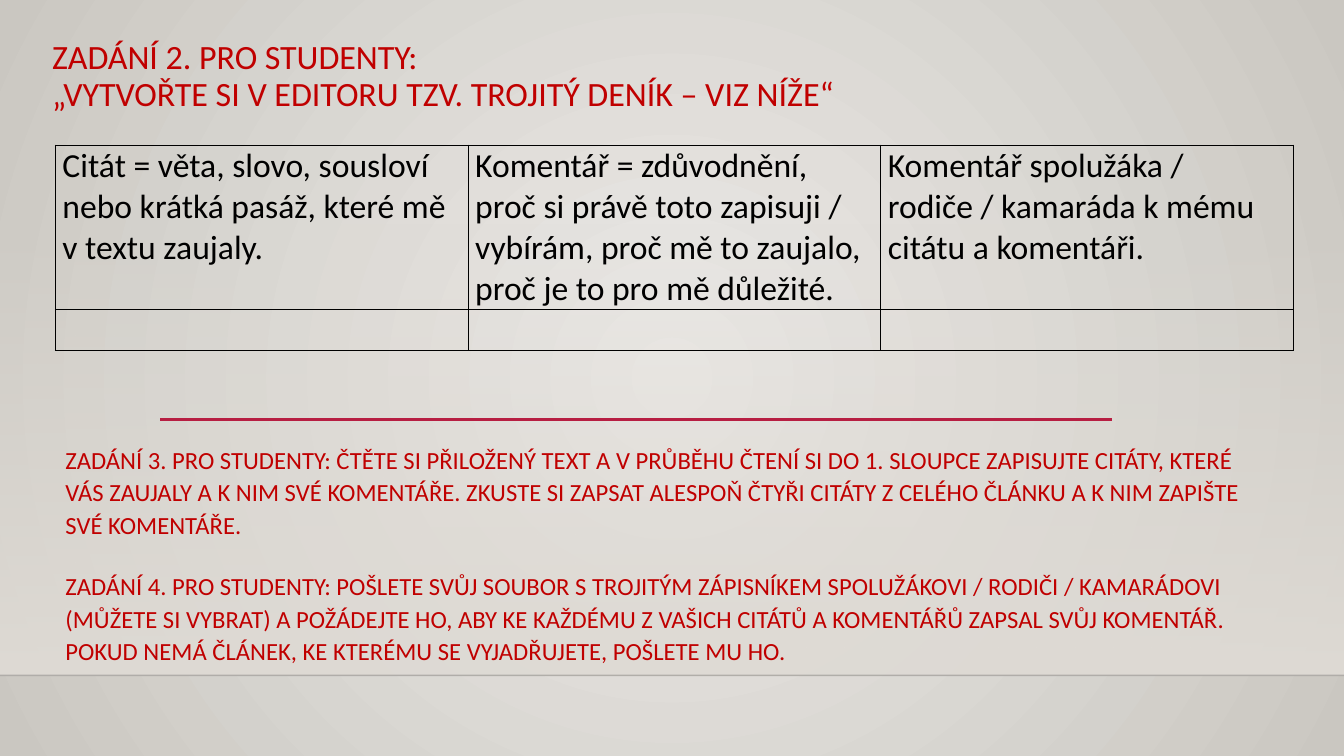
from dataclasses import dataclass

from pptx import Presentation
from pptx.dml.color import RGBColor
from pptx.enum.shapes import MSO_CONNECTOR, MSO_SHAPE
from pptx.enum.text import MSO_ANCHOR
from pptx.oxml import parse_xml
from pptx.oxml.ns import nsdecls, qn
from pptx.util import Inches, Pt

STRAIGHT = MSO_CONNECTOR.STRAIGHT
RECTANGLE = MSO_SHAPE.RECTANGLE
TOP = MSO_ANCHOR.TOP
BOTTOM = MSO_ANCHOR.BOTTOM


@dataclass(frozen=True)
class Theme:
    font: str = "Calibri"
    center: str = "ECEAE7"
    edge: str = "CAC7C1"
    panel: str = "DFDBD5"
    floor: str = "000001"
    rule: str = "B71E42"
    accent: str = "C00000"
    ink: str = "000000"
    title_size: float = 24.3
    body_size: float = 17.6
    cell_size: float = 24


THEME = Theme()
WIDTH, HEIGHT = 13.33, 7.5

TITLE = "ZADÁNÍ 2. PRO STUDENTY:\v„VYTVOŘTE SI V EDITORU TZV. TROJITÝ DENÍK – VIZ NÍŽE“"
TASKS = [
    "ZADÁNÍ 3. PRO STUDENTY: ČTĚTE SI PŘILOŽENÝ TEXT A V PRŮBĚHU ČTENÍ SI DO 1. SLOUPCE "
    "ZAPISUJTE CITÁTY, KTERÉ VÁS ZAUJALY A K NIM SVÉ KOMENTÁŘE. ZKUSTE SI ZAPSAT ALESPOŇ "
    "ČTYŘI CITÁTY Z CELÉHO ČLÁNKU A K NIM ZAPIŠTE SVÉ KOMENTÁŘE.",
    "ZADÁNÍ 4. PRO STUDENTY: POŠLETE SVŮJ SOUBOR S TROJITÝM ZÁPISNÍKEM SPOLUŽÁKOVI / RODIČI / "
    "KAMARÁDOVI (MŮŽETE SI VYBRAT) A POŽÁDEJTE HO, ABY KE KAŽDÉMU Z VAŠICH CITÁTŮ A KOMENTÁŘŮ "
    "ZAPSAL SVŮJ KOMENTÁŘ. POKUD NEMÁ ČLÁNEK, KE KTERÉMU SE VYJADŘUJETE, POŠLETE MU HO.",
]
COLUMNS = [
    "Citát = věta, slovo, sousloví nebo krátká pasáž, které mě v textu zaujaly.",
    "Komentář = zdůvodnění, proč si právě toto zapisuji / vybírám, proč mě to zaujalo, "
    "proč je to pro mě důležité.",
    "Komentář spolužáka / rodiče / kamaráda k mému citátu a komentáři.",
]


def apply(target, values):
    for name, value in values.items():
        setattr(target, name, value)


def style_spans(para, size, color):
    for span in para.runs:
        apply(span.font, {"name": THEME.font, "size": Pt(size)})
        span.font.color.rgb = RGBColor.from_string(color)


def set_gradient(fill, parent, stops, direction):
    fill.gradient()
    marks = "".join(
        f'<a:gs pos="{place * 1000}"><a:srgbClr val="{color}">'
        f'<a:alpha val="{alpha * 1000}"/></a:srgbClr></a:gs>'
        for place, color, alpha in stops
    )
    gradient = parent.find(".//" + qn("a:gradFill"))
    gradient.getparent().replace(gradient, parse_xml(
        f'<a:gradFill {nsdecls("a")} rotWithShape="1">'
        f"<a:gsLst>{marks}</a:gsLst>{direction}</a:gradFill>"))


def add_line(page, left, top, width, color, weight, alpha=100):
    line = page.shapes.add_connector(
        STRAIGHT, Inches(left), Inches(top), Inches(left + width), Inches(top))
    line.line.color.rgb = RGBColor.from_string(color)
    line.line.width = Pt(weight)
    properties = line._element.spPr
    properties.append(parse_xml(f'<a:effectLst {nsdecls("a")}/>'))
    if alpha < 100:
        properties.find(".//" + qn("a:srgbClr")).append(
            parse_xml(f'<a:alpha {nsdecls("a")} val="{alpha * 1000}"/>'))


def add_backdrop(page, left, top, width, height):
    set_gradient(
        page.background.fill, page.element,
        [(0, THEME.center, 100), (100, THEME.edge, 100)],
        '<a:path path="circle"><a:fillToRect l="50000" t="50000" r="50000" b="50000"/></a:path>')
    panel = page.shapes.add_shape(
        RECTANGLE, Inches(left), Inches(top), Inches(width), Inches(height))
    panel.shadow.inherit = False
    panel.line.fill.background()
    set_gradient(
        panel.fill, panel._element.spPr,
        [(0, THEME.panel, 0), (100, THEME.panel, 100)],
        '<a:lin ang="5400000" scaled="0"/>')
    add_line(page, left, top + height, width, THEME.floor, 1, 20)


def add_text(page, left, top, width, height, texts, size, frame_format, para_format, gap=0):
    box = page.shapes.add_textbox(Inches(left), Inches(top), Inches(width), Inches(height))
    frame = box.text_frame
    apply(frame, {"word_wrap": True, **frame_format})
    for index, text in enumerate(texts):
        para = frame.add_paragraph() if index else frame.paragraphs[0]
        para.text = text
        apply(para, para_format)
        if index:
            para.space_before = Pt(gap)
        style_spans(para, size, THEME.accent)


def add_borders(cell):
    properties = cell._tc.get_or_add_tcPr()
    for side in ("lnL", "lnR", "lnT", "lnB"):
        properties.append(parse_xml(
            f'<a:{side} {nsdecls("a")} w="{Pt(1)}"><a:solidFill>'
            f'<a:srgbClr val="{THEME.ink}"/></a:solidFill></a:{side}>'))


def add_diary(page, left, top, width, row_heights):
    table = page.shapes.add_table(
        len(row_heights), len(COLUMNS), Inches(left), Inches(top),
        Inches(width), Inches(sum(row_heights))).table
    apply(table, {"first_row": False, "horz_banding": False})
    for row, height in zip(table.rows, row_heights):
        row.height = Inches(height)
    for cell, text in zip(table.rows[0].cells, COLUMNS):
        cell.text = text
        style_spans(cell.text_frame.paragraphs[0], THEME.cell_size, THEME.ink)
    for cell in table.iter_cells():
        apply(cell, {"margin_left": Inches(0.07), "margin_right": Inches(0.07),
                     "margin_top": 0, "margin_bottom": 0})
        add_borders(cell)
        cell.fill.background()


def main():
    deck = Presentation()
    apply(deck, {"slide_width": Inches(WIDTH), "slide_height": Inches(HEIGHT)})
    page = deck.slides.add_slide(deck.slide_layouts[6])
    add_backdrop(page, 0, 2.21, WIDTH, 4.49)
    add_line(page, 1.59, 4.16, 9.44, THEME.rule, 2.5)
    add_text(page, 0.42, 0.38, 12.5, 0.8, [TITLE], THEME.title_size,
             {"vertical_anchor": BOTTOM}, {"line_spacing": 0.9})
    add_text(page, 0.55, 4.28, 12.07, 2.45, TASKS, THEME.body_size,
             {"vertical_anchor": TOP, "margin_top": Inches(0.1)},
             {"line_spacing": 1.1}, gap=21)
    add_diary(page, 0.55, 1.44, 12.28, [1.63, 0.41])
    deck.save("out.pptx")


if __name__ == "__main__":
    main()
